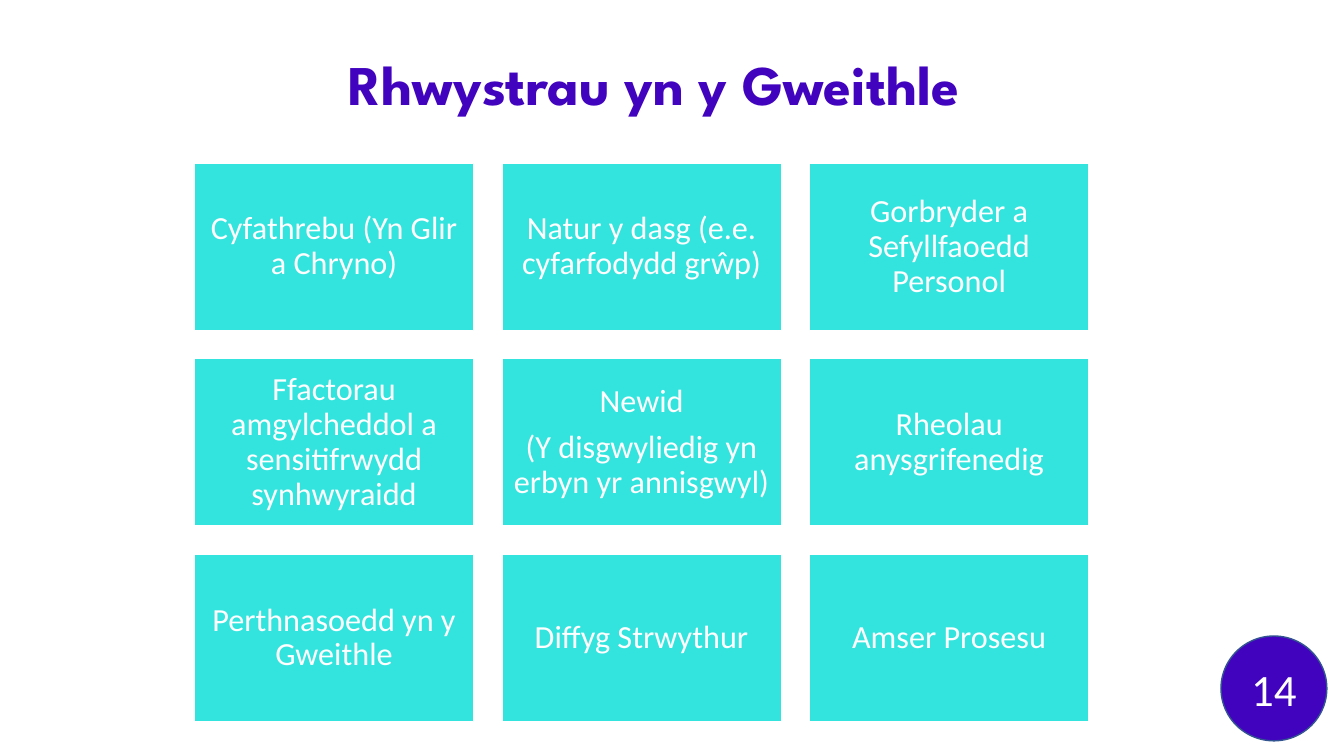
from pptx import Presentation
from pptx.dml.color import RGBColor
from pptx.enum.shapes import MSO_SHAPE
from pptx.enum.text import MSO_ANCHOR, PP_ALIGN
from pptx.util import Inches, Pt

RECTANGLE, OVAL = MSO_SHAPE.RECTANGLE, MSO_SHAPE.OVAL
MIDDLE = MSO_ANCHOR.MIDDLE
LEFT, CENTER = PP_ALIGN.LEFT, PP_ALIGN.CENTER
TITLE_ONLY = 5

COLOURS = {"purple": "4203BF", "turquoise": "33E4DE", "white": "FFFFFF", "blue": "325491"}
TITLE_FONT = {"name": "League Spartan", "size": Pt(40), "bold": True}
CARD_FONT = {"name": "Calibri", "size": Pt(23)}
NUMBER_FONT = {"name": "Calibri", "size": Pt(32)}
CARD_PARA = {"alignment": CENTER, "line_spacing": 0.9, "space_after": Pt(8)}

COLUMNS = 3
CARD_WIDTH, CARD_HEIGHT, GAP = 2.77, 1.66, 0.28
BARRIERS = [
    "Cyfathrebu (Yn Glir a Chryno)",
    "Natur y dasg (e.e. cyfarfodydd grŵp)",
    "Gorbryder a Sefyllfaoedd Personol",
    "Ffactorau amgylcheddol a sensitifrwydd synhwyraidd",
    "Newid\n(Y disgwyliedig yn erbyn yr annisgwyl)",
    "Rheolau anysgrifenedig",
    "Perthnasoedd yn y Gweithle",
    "Diffyg Strwythur",
    "Amser Prosesu",
]


def colour(name):
    return RGBColor.from_string(COLOURS[name])


def set_all(target, values):
    for name, value in values.items():
        setattr(target, name, value)


def write(shape, text, font, ink, para_format):
    frame = shape.text_frame
    frame.word_wrap = True
    frame.vertical_anchor = MIDDLE
    frame.text = text
    for para in frame.paragraphs:
        set_all(para, para_format)
        for span in para.runs:
            set_all(span.font, font)
            span.font.color.rgb = colour(ink)


def add_filled(page, kind, box, fill, line):
    shape = page.shapes.add_shape(kind, *map(Inches, box))
    shape.shadow.inherit = False
    shape.fill.solid()
    shape.fill.fore_color.rgb = colour(fill)
    shape.line.color.rgb = colour(line)
    shape.line.width = Pt(1)
    return shape


def add_title(page, box):
    title = page.shapes.title
    set_all(title, dict(zip(("left", "top", "width", "height"), map(Inches, box))))
    write(title, "Rhwystrau yn y Gweithle", TITLE_FONT, "purple",
          {"alignment": LEFT, "line_spacing": 0.9})


def add_barriers(page, left, top):
    for index, text in enumerate(BARRIERS):
        row, column = divmod(index, COLUMNS)
        box = (left + column * (CARD_WIDTH + GAP), top + row * (CARD_HEIGHT + GAP),
               CARD_WIDTH, CARD_HEIGHT)
        card = add_filled(page, RECTANGLE, box, "turquoise", "white")
        margins = ("margin_left", "margin_top", "margin_right", "margin_bottom")
        set_all(card.text_frame, dict.fromkeys(margins, Inches(0.1)))
        write(card, text, CARD_FONT, "white", CARD_PARA)


def add_page_number(page, box):
    badge = add_filled(page, OVAL, box, "purple", "blue")
    write(badge, "14", NUMBER_FONT, "white", {"alignment": CENTER})


def main():
    deck = Presentation()
    deck.slide_width, deck.slide_height = Inches(13.33), Inches(7.5)
    page = deck.slides.add_slide(deck.slide_layouts[TITLE_ONLY])
    add_title(page, (3.36, 0.51, 7.24, 0.71))
    add_barriers(page, 1.93, 1.62)
    add_page_number(page, (12.11, 6.31, 1.05, 1.04))
    deck.save("out.pptx")


if __name__ == "__main__":
    main()
